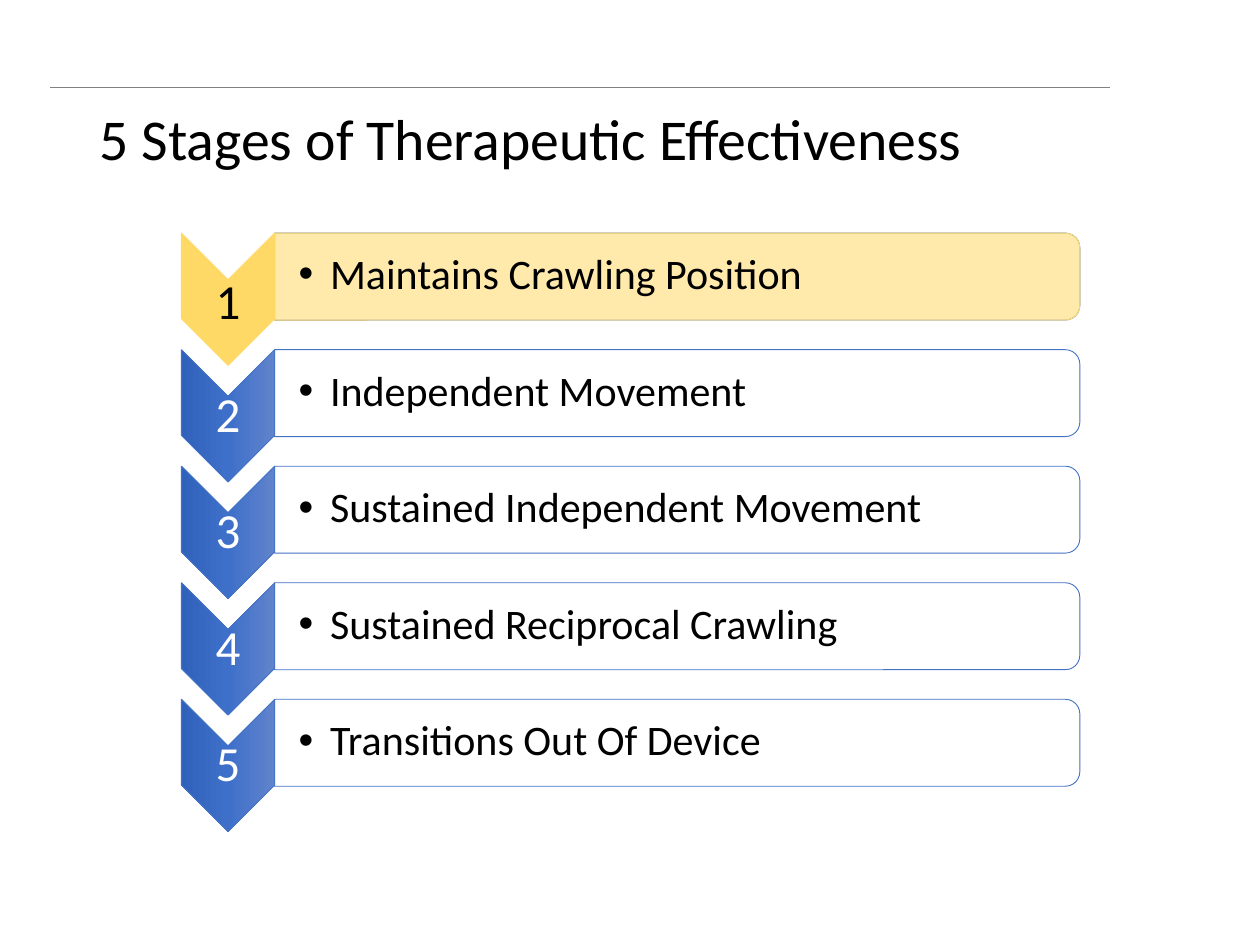
from lxml import etree
from pptx import Presentation
from pptx.dml.color import RGBColor
from pptx.enum import shapes, text
from pptx.oxml.ns import qn
from pptx.util import Inches, Pt

BLACK = RGBColor(0x00, 0x00, 0x00)
WHITE = RGBColor(0xFF, 0xFF, 0xFF)
GREY = RGBColor(0x80, 0x80, 0x80)
BLUE = RGBColor(0x44, 0x72, 0xC4)
GOLD = RGBColor(0xFF, 0xD9, 0x66)
BLUE_TOP = RGBColor(0x61, 0x83, 0xCB)
BLUE_MIDDLE = RGBColor(0x3E, 0x70, 0xCA)
BLUE_BOTTOM = RGBColor(0x30, 0x62, 0xBB)

FONT = "Calibri"
STAGES = [
    "Maintains Crawling Position",
    "Independent Movement",
    "Sustained Independent Movement",
    "Sustained Reciprocal Crawling",
    "Transitions Out Of Device",
]
ROW_TOP, ROW_PITCH = 1.85, 0.925
CHEVRON_LEFT, CHEVRON_WIDTH, CHEVRON_HEIGHT = 1.44, 0.74, 1.05
BAR_LEFT, BAR_WIDTH, BAR_HEIGHT = 2.18, 6.39, 0.69


def add_run(paragraph, content, size, color):
    run = paragraph.add_run()
    run.text = content
    run.font.name = FONT
    run.font.size = Pt(size)
    run.font.color.rgb = color


def add_turned_shape(slide, kind, left, top, width, height, line_color):
    """Add a preset turned by 90 degrees; the box given is the one seen on the slide."""
    shape = slide.shapes.add_shape(
        kind,
        Inches(left + (width - height) / 2),
        Inches(top + (height - width) / 2),
        Inches(height),
        Inches(width),
    )
    shape.rotation = 90
    shape.shadow.inherit = False
    shape.line.color.rgb = line_color
    shape.line.width = Pt(0.5)
    return shape


def fill_solid(shape, color, opacity=100):
    shape.fill.solid()
    shape.fill.fore_color.rgb = color
    if opacity < 100:
        color_element = shape.fill._xPr.find(qn("a:solidFill"))[0]
        etree.SubElement(color_element, qn("a:alpha"), val=str(opacity * 1000))


def fill_blue_gradient(shape):
    shape.fill.gradient()
    shape.fill.gradient_angle = 270
    stop_list = shape.fill._xPr.find(qn("a:gradFill")).find(qn("a:gsLst"))
    for stop in list(stop_list):
        stop_list.remove(stop)
    for position, color in ((0, BLUE_TOP), (50, BLUE_MIDDLE), (100, BLUE_BOTTOM)):
        stop = etree.SubElement(stop_list, qn("a:gs"), pos=str(position * 1000))
        etree.SubElement(stop, qn("a:srgbClr"), val=str(color))


def add_text_box(slide, left, top, width, height, left_inset=0.02):
    """Add a middle-anchored box and return its first paragraph."""
    frame = slide.shapes.add_textbox(
        Inches(left), Inches(top), Inches(width), Inches(height)
    ).text_frame
    frame.word_wrap = True
    frame.vertical_anchor = text.MSO_ANCHOR.MIDDLE
    frame.margin_left = Inches(left_inset)
    frame.margin_top = frame.margin_right = frame.margin_bottom = Inches(0.02)
    paragraph = frame.paragraphs[0]
    paragraph.line_spacing = 0.9
    return paragraph


def add_bullet(paragraph):
    properties = paragraph._p.get_or_add_pPr()
    properties.set("marL", str(Inches(0.25)))
    properties.set("indent", str(-Inches(0.25)))
    etree.SubElement(properties, qn("a:buFont"), typeface="Arial")
    etree.SubElement(properties, qn("a:buChar"), char="•")


def add_bar(slide, top, label, highlighted):
    def add_layer(color, opacity, line_color):
        bar = add_turned_shape(
            slide, shapes.MSO_SHAPE.ROUND_2_SAME_RECTANGLE,
            BAR_LEFT, top, BAR_WIDTH, BAR_HEIGHT, line_color,
        )
        fill_solid(bar, color, opacity)

    if highlighted:
        add_layer(GOLD, 100, BLUE)
        add_layer(WHITE, 45, GOLD)
    else:
        add_layer(WHITE, 90, BLUE)
    paragraph = add_text_box(slide, BAR_LEFT, top + 0.03, 6.36, 0.62, left_inset=0.19)
    add_bullet(paragraph)
    add_run(paragraph, label, 24, BLACK)


def add_chevron(slide, top, number, highlighted):
    chevron = add_turned_shape(
        slide, shapes.MSO_SHAPE.CHEVRON,
        CHEVRON_LEFT, top, CHEVRON_WIDTH, CHEVRON_HEIGHT,
        GOLD if highlighted else BLUE,
    )
    if highlighted:
        fill_solid(chevron, GOLD)
    else:
        fill_blue_gradient(chevron)
    paragraph = add_text_box(slide, CHEVRON_LEFT, top + 0.37, CHEVRON_WIDTH, 0.32)
    paragraph.alignment = text.PP_ALIGN.CENTER
    if highlighted:
        paragraph.line_spacing = 1.0
    add_run(paragraph, str(number), 28, BLACK if highlighted else WHITE)


def add_rule(slide):
    rule = slide.shapes.add_connector(
        shapes.MSO_CONNECTOR.STRAIGHT,
        Inches(0.4), Inches(0.69), Inches(8.81), Inches(0.69),
    )
    rule.line.color.rgb = GREY
    rule.line.width = Pt(0.25)
    etree.SubElement(rule._element.spPr, qn("a:effectLst"))


def set_title(slide, content):
    title = slide.shapes.title
    title.left, title.top = Inches(0.69), Inches(0.4)
    title.width, title.height = Inches(8.62), Inches(1.45)
    title.text_frame.vertical_anchor = text.MSO_ANCHOR.MIDDLE
    paragraph = title.text_frame.paragraphs[0]
    paragraph.alignment = text.PP_ALIGN.LEFT
    paragraph.line_spacing = 0.9
    add_run(paragraph, content, 33, BLACK)


def main():
    presentation = Presentation()
    presentation.slide_width = Inches(10)
    presentation.slide_height = Inches(7.5)
    slide = presentation.slides.add_slide(presentation.slide_layouts[5])
    add_rule(slide)
    set_title(slide, "5 Stages of Therapeutic Effectiveness")
    for index, label in enumerate(STAGES):
        top = ROW_TOP + index * ROW_PITCH
        highlighted = index == 0
        add_chevron(slide, top, index + 1, highlighted)
        add_bar(slide, top, label, highlighted)
    presentation.save("out.pptx")


if __name__ == "__main__":
    main()
